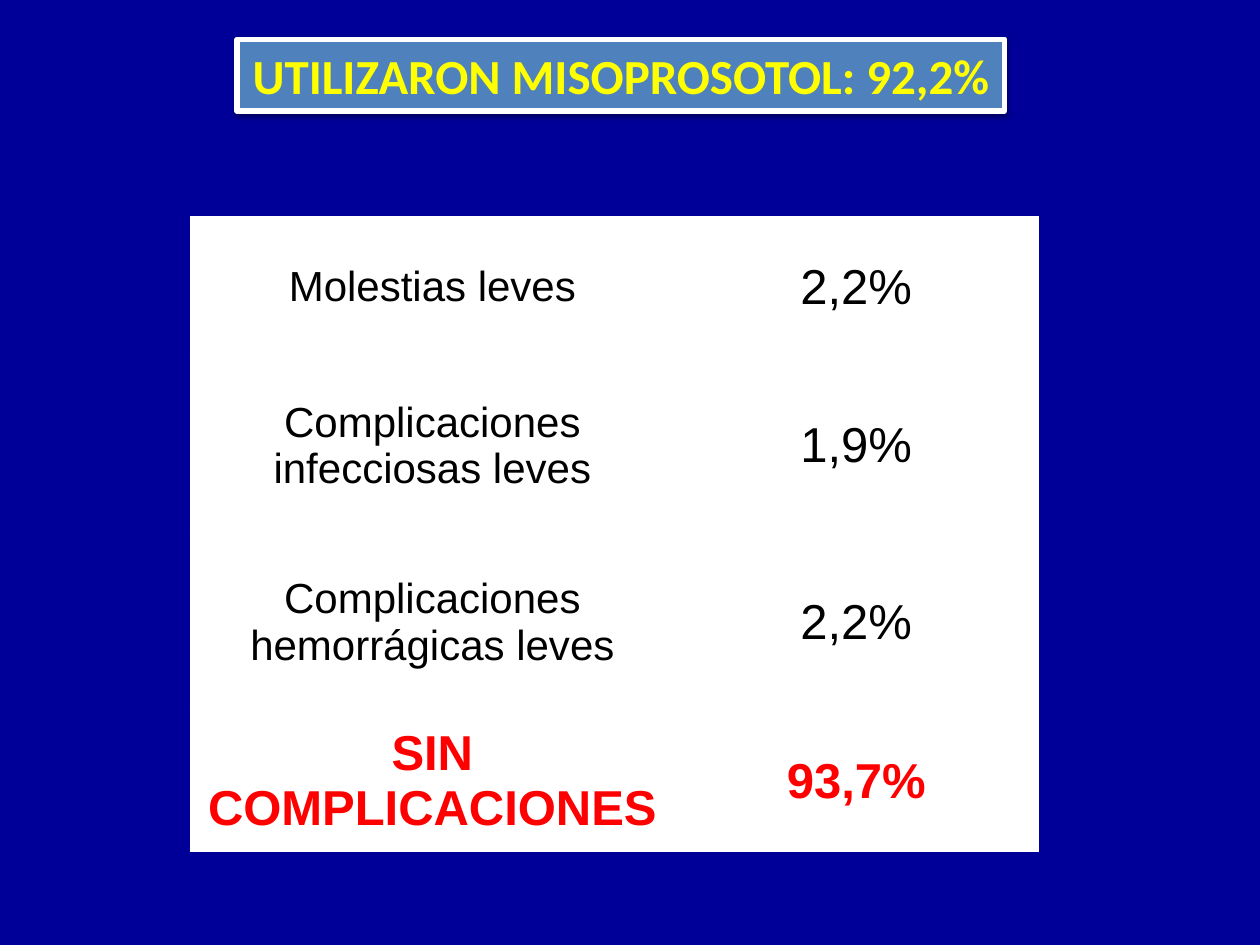
from lxml.etree import SubElement
from pptx import Presentation
from pptx.dml.color import RGBColor as Rgb
from pptx.enum.shapes import MSO_SHAPE as Preset
from pptx.enum.text import MSO_ANCHOR as Anchor, MSO_AUTO_SIZE as AutoSize, PP_ALIGN as Align
from pptx.oxml.ns import qn
from pptx.util import Cm, Pt

# Content
TITLE = "UTILIZARON MISOPROSOTOL: 92,2%"
OUTCOMES = [
    ("Molestias leves", "2,2%"),
    ("Complicaciones infecciosas leves", "1,9%"),
    ("Complicaciones hemorrágicas leves", "2,2%"),
    ("SIN COMPLICACIONES", "93,7%"),
]

THEME = {
    "background": "000099", "banner": "4F81BD", "title": "FFFF00",
    "white": "FFFFFF", "text": "000000", "highlight": "FF0000",
    "title_font": "Calibri", "table_font": "Arial",
    "large": 28, "label": 24,
}

# Layout in centimetres
BANNER = (4.78, 0.79, 15.47, 1.45)
TABLE_LEFT, TABLE_TOP = 3.84, 4.37
COLUMN_WIDTHS = (9.75, 7.34)
ROW_HEIGHTS = (2.84, 3.56, 3.56, 2.84)


def paint(fill, color):
    fill.solid()
    fill.fore_color.rgb = Rgb.from_string(THEME[color])


def write(text_frame, text, font, size, color, bold=False):
    text_frame.text = text
    paragraph = text_frame.paragraphs[0]
    paragraph.alignment = Align.CENTER
    style = paragraph.runs[0].font
    style.name, style.size, style.bold = THEME[font], Pt(THEME[size]), bold
    style.color.rgb = Rgb.from_string(THEME[color])


def add_soft_shadow(shape):
    shape.shadow.inherit = False
    effects = shape._element.spPr.find(qn("a:effectLst"))
    shadow = SubElement(effects, qn("a:outerShdw"), blurRad=str(Pt(3.1)),
                        dist=str(Pt(1.6)), dir="5400000", rotWithShape="0")
    color = SubElement(shadow, qn("a:srgbClr"), val=THEME["text"])
    SubElement(color, qn("a:alpha"), val="38000")


def add_outcome_table(slide):
    frame = slide.shapes.add_table(
        len(OUTCOMES), len(COLUMN_WIDTHS), Cm(TABLE_LEFT), Cm(TABLE_TOP),
        Cm(sum(COLUMN_WIDTHS)), Cm(sum(ROW_HEIGHTS)))
    table = frame.table
    table.first_row = table.horz_banding = False
    for column, width in zip(table.columns, COLUMN_WIDTHS):
        column.width = Cm(width)
    for row, height, texts in zip(table.rows, ROW_HEIGHTS, OUTCOMES):
        row.height = Cm(height)
        is_total = texts is OUTCOMES[-1]
        for index, (cell, text) in enumerate(zip(row.cells, texts)):
            paint(cell.fill, "white")
            cell.vertical_anchor = Anchor.MIDDLE
            size = "large" if is_total or index else "label"
            color = "highlight" if is_total else "text"
            write(cell.text_frame, text, "table_font", size, color, is_total)


def add_banner(slide):
    banner = slide.shapes.add_shape(Preset.RECTANGLE, *map(Cm, BANNER))
    paint(banner.fill, "banner")
    paint(banner.line.fill, "white")
    banner.line.width = Pt(3)
    add_soft_shadow(banner)
    text_frame = banner.text_frame
    text_frame.word_wrap = False
    text_frame.auto_size = AutoSize.SHAPE_TO_FIT_TEXT
    text_frame.vertical_anchor = Anchor.TOP
    write(text_frame, TITLE, "title_font", "large", "title", True)


def main():
    presentation = Presentation()
    presentation.slide_width, presentation.slide_height = Cm(25.4), Cm(19.05)
    slide = presentation.slides.add_slide(presentation.slide_layouts[6])
    paint(slide.background.fill, "background")
    add_outcome_table(slide)
    add_banner(slide)
    presentation.save("out.pptx")


if __name__ == "__main__":
    main()
